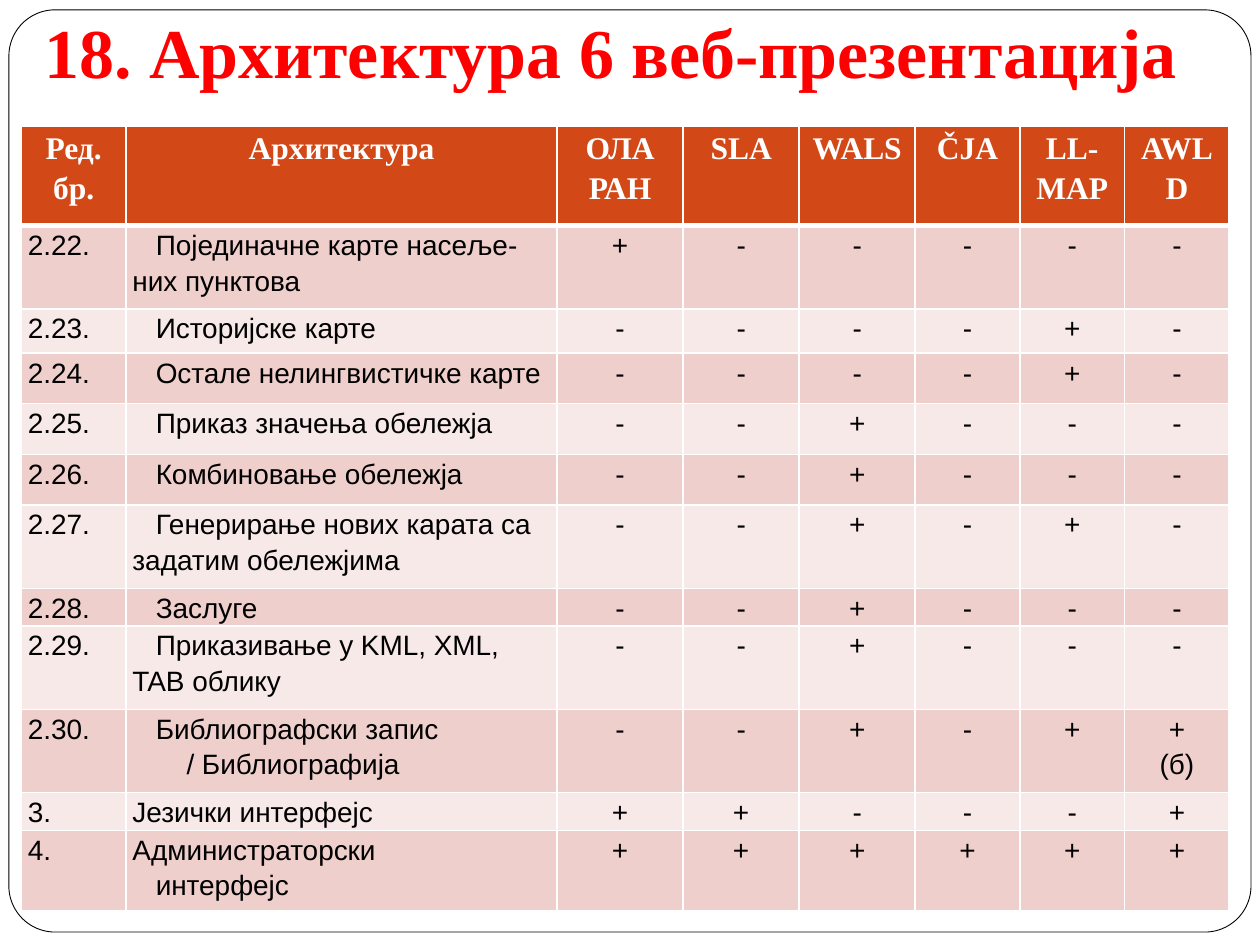
import pptx
import pptx.dml.color
import pptx.enum.shapes
import pptx.enum.text
import pptx.oxml
import pptx.oxml.ns
import pptx.util

Cm = pptx.util.Cm
Pt = pptx.util.Pt
RGBColor = pptx.dml.color.RGBColor
PP_ALIGN = pptx.enum.text.PP_ALIGN

WHITE = RGBColor(0xFF, 0xFF, 0xFF)
BLACK = RGBColor(0x00, 0x00, 0x00)
RED = RGBColor(0xFF, 0x00, 0x00)
HEADER = RGBColor(0xD3, 0x48, 0x17)
BANDS = (RGBColor(0xEF, 0xCF, 0xCC), RGBColor(0xF7, 0xE9, 0xE8))

COL_WIDTHS = [2.11, 8.69, 2.54, 2.34, 2.34, 2.11, 2.11, 2.11]
ROW_HEIGHTS = [2.01, 1.68, 0.89, 1.02, 1.02, 1.02, 1.68, 0.76, 1.68, 1.68, 0.76, 1.63]
NO_INDENT, SUB_INDENT, DEEP_INDENT = 0, 0.47, 1.09

HEADINGS = ["Ред.\nбр.", "Архитектура", "ОЛА\nРАН", "SLA", "WALS", "ČJA", "LL-MAP", "AWLD"]
ROWS = [
    ("2.22.", "Појединачне карте насеље-них пунктова", [SUB_INDENT], "+-----"),
    ("2.23.", "Историјске карте", [SUB_INDENT], "----+-"),
    ("2.24.", "Остале нелингвистичке карте", [SUB_INDENT], "----+-"),
    ("2.25.", "Приказ значења обележја", [SUB_INDENT], "--+---"),
    ("2.26.", "Комбиновање обележја", [SUB_INDENT], "--+---"),
    ("2.27.", "Генерирање нових карата са задатим обележјима", [SUB_INDENT], "--+-+-"),
    ("2.28.", "Заслуге", [SUB_INDENT], "--+---"),
    ("2.29.", "Приказивање у KML, XML, TAB облику", [SUB_INDENT], "--+---"),
    ("2.30.", "Библиографски запис\n/ Библиографија", [SUB_INDENT, DEEP_INDENT],
     ["-", "-", "+", "-", "+", "+\n(б)"]),
    ("3.", "Језички интерфејс", [NO_INDENT], "++---+"),
    ("4.", "Администраторски\nинтерфејс", [NO_INDENT, SUB_INDENT], "++++++"),
]


def add_run(p, text, font, size, color, bold=False):
    r = p.add_run()
    r.text = text
    r.font.name = font
    r.font.size = Pt(size)
    r.font.color.rgb = color
    r.font.bold = bold


def add_frame(s):
    frame = s.shapes.add_shape(pptx.enum.shapes.MSO_SHAPE.ROUNDED_RECTANGLE,
                               Cm(0.18), Cm(0.2), Cm(25.04), Cm(18.59))
    frame.adjustments[0] = 0.05
    frame.shadow.inherit = False
    frame.fill.solid()
    frame.fill.fore_color.rgb = WHITE
    frame.line.color.rgb = BLACK
    frame.line.width = Pt(0.5)
    s.shapes.title._element.addprevious(frame._element)


def set_title(s, text):
    title = s.shapes.title
    title.left, title.top, title.width, title.height = Cm(0.64), Cm(0), Cm(23.93), Cm(2.11)
    tf = title.text_frame
    tf.auto_size = pptx.enum.text.MSO_AUTO_SIZE.NONE
    tf.vertical_anchor = pptx.enum.text.MSO_ANCHOR.BOTTOM
    tf.margin_left = tf.margin_right = tf.margin_bottom = Cm(0.25)
    tf.margin_top = Cm(0.13)
    p = tf.paragraphs[0]
    p.alignment = PP_ALIGN.LEFT
    add_run(p, text, "Times New Roman", 40, RED, True)


def set_borders(cell, top, bottom):
    tc_pr = cell._tc.get_or_add_tcPr()
    for side, width in (("L", 1), ("R", 1), ("T", top), ("B", bottom)):
        tc_pr.append(pptx.oxml.parse_xml(
            f'<a:ln{side} {pptx.oxml.ns.nsdecls("a")} w="{Pt(width)}">'
            f'<a:solidFill><a:srgbClr val="{WHITE}"/></a:solidFill></a:ln{side}>'))


def fill_cell(cell, text, color, align, font, indents=(NO_INDENT,), top=1, bottom=1):
    set_borders(cell, top, bottom)
    cell.fill.solid()
    cell.fill.fore_color.rgb = color
    cell.margin_left = cell.margin_right = Cm(0.13)
    cell.margin_top = cell.margin_bottom = 0
    tf = cell.text_frame
    for i, line in enumerate(text.split("\n")):
        p = tf.add_paragraph() if i else tf.paragraphs[0]
        p.alignment = align
        p.line_spacing = 1.15
        if indents[min(i, len(indents) - 1)]:
            p._p.get_or_add_pPr().set("indent", str(Cm(indents[i])))
        add_run(p, line, *font)


def add_comparison_table(s):
    table = s.shapes.add_table(len(ROW_HEIGHTS), len(COL_WIDTHS), Cm(0.43), Cm(2.54),
                               Cm(sum(COL_WIDTHS)), Cm(sum(ROW_HEIGHTS))).table
    for column, width in zip(table.columns, COL_WIDTHS):
        column.width = Cm(width)
    for row, height in zip(table.rows, ROW_HEIGHTS):
        row.height = Cm(height)

    header_font = ("Times New Roman", 18, WHITE, True)
    body_font = ("Arial", 16, BLACK)
    for j, heading in enumerate(HEADINGS):
        fill_cell(table.cell(0, j), heading, HEADER, PP_ALIGN.CENTER, header_font, bottom=3)
    for i, (number, feature, indents, marks) in enumerate(ROWS, 1):
        color = BANDS[(i - 1) % 2]
        top = 3 if i == 1 else 1
        fill_cell(table.cell(i, 0), number, color, PP_ALIGN.LEFT, body_font, top=top)
        fill_cell(table.cell(i, 1), feature, color, PP_ALIGN.LEFT, body_font, indents, top)
        for j, mark in enumerate(marks, 2):
            fill_cell(table.cell(i, j), mark, color, PP_ALIGN.CENTER, body_font, top=top)


def main():
    prs = pptx.Presentation()
    prs.slide_width, prs.slide_height = Cm(25.4), Cm(19.05)
    s = prs.slides.add_slide(prs.slide_layouts.get_by_name("Title Only"))
    add_frame(s)
    set_title(s, "18. Архитектура 6 веб-презентација")
    add_comparison_table(s)
    prs.save("out.pptx")


if __name__ == "__main__":
    main()
